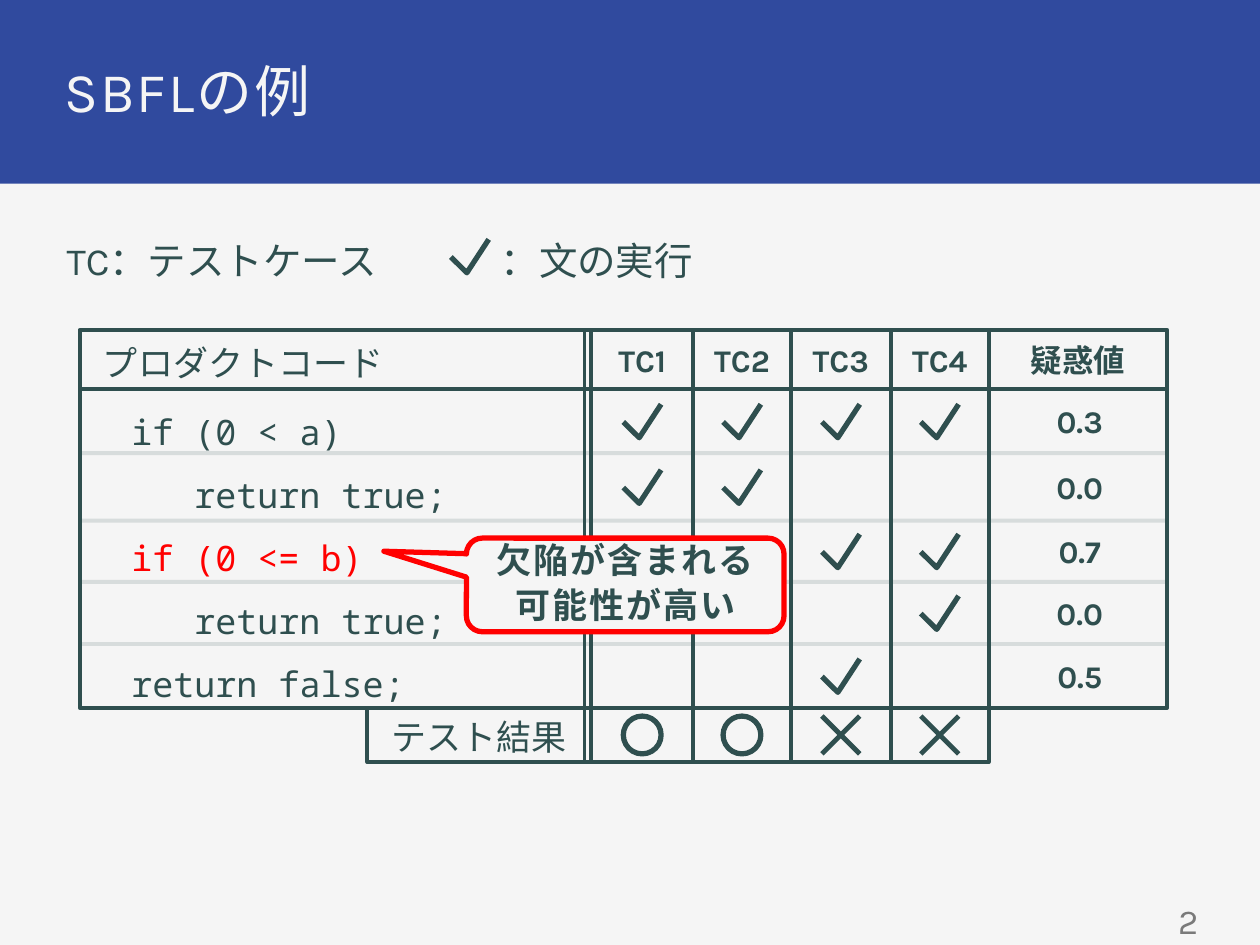
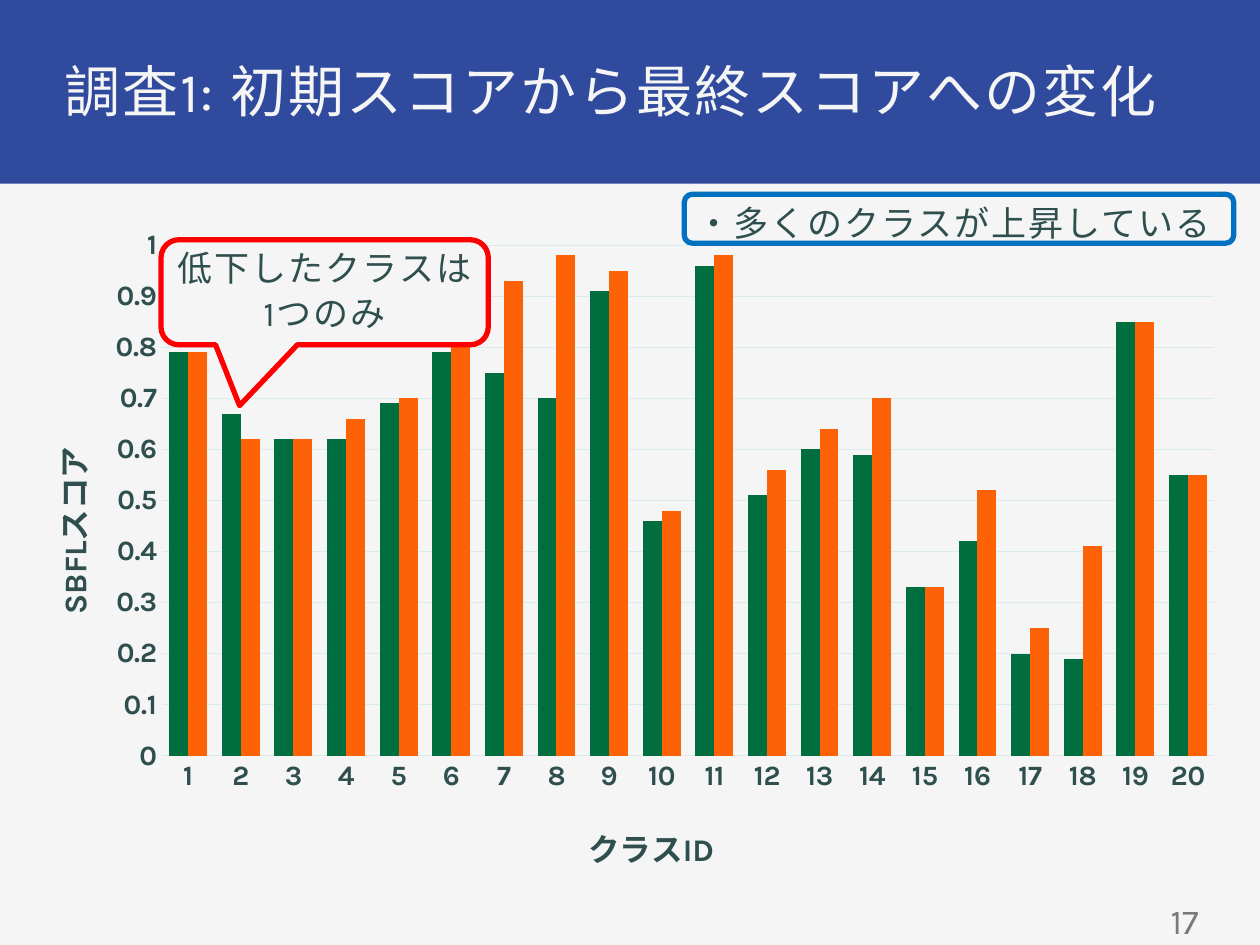
import itertools

import lxml.etree
import pptx
import pptx.chart.data
import pptx.dml.color
import pptx.enum.chart
import pptx.enum.shapes
import pptx.enum.text
import pptx.oxml
import pptx.oxml.ns
import pptx.util

Pt = pptx.util.Pt
RGBColor = pptx.dml.color.RGBColor
Shape = pptx.enum.shapes.MSO_SHAPE
Align = pptx.enum.text.PP_ALIGN
Anchor = pptx.enum.text.MSO_ANCHOR
qn = pptx.oxml.ns.qn

PAPER = RGBColor(0xF5, 0xF5, 0xF5)
BAND = RGBColor(0x30, 0x4A, 0x9E)
INK = RGBColor(0x2F, 0x4F, 0x4F)
GRAY = RGBColor(0x7A, 0x7A, 0x7A)
RED = RGBColor(0xFF, 0x00, 0x00)
BLUE = RGBColor(0x00, 0x70, 0xC0)
GRID = RGBColor(0xDB, 0xEA, 0xEA)
GREEN = RGBColor(0x00, 0x6E, 0x3E)
ORANGE = RGBColor(0xFE, 0x62, 0x07)

TITLES = ["SBFLの例", "調査1: 初期スコアから最終スコアへの変化"]
PAGE_NUMBERS = ["2", "17"]

TEST_CASES = ["TC1", "TC2", "TC3", "TC4"]
STATEMENTS = [
    ("if (0 < a)", 48, INK, [0, 1, 2, 3], "0.3"),
    ("return true;", 84, INK, [0, 1], "0.0"),
    ("if (0 <= b)", 48, RED, [2, 3], "0.7"),
    ("return true;", 84, INK, [3], "0.0"),
    ("return false;", 48, INK, [2], "0.5"),
]
PASSED = [True, True, False, False]
CASE_EDGES = [338, 396, 452, 509, 565]
ROW_EDGES = [222.5, 259, 297.5, 332.5, 368, 404.5]
TABLE_LEFT, TABLE_RIGHT, TABLE_TOP = 45.5, 667, 188.5
CODE_RIGHT, RESULT_LEFT, RESULT_BOTTOM = 334, 210, 435.5
MARK = 21.6

SCORES = {
    "初期スコア": (GREEN, [0.79, 0.67, 0.62, 0.62, 0.69, 0.79, 0.75, 0.7, 0.91, 0.46,
                      0.96, 0.51, 0.6, 0.59, 0.33, 0.42, 0.2, 0.19, 0.85, 0.55]),
    "最終スコア": (ORANGE, [0.79, 0.62, 0.62, 0.66, 0.7, 1, 0.93, 0.98, 0.95, 0.48,
                       0.98, 0.56, 0.64, 0.7, 0.33, 0.52, 0.25, 0.41, 0.85, 0.55]),
}


def style_font(font, size, color=INK, bold=False, name="Karla"):
    """Set the look of a font."""
    font.size, font.bold, font.name = Pt(size), bold, name
    font.color.rgb = color


def write(frame, text, size=18, color=INK, bold=False, name="Karla", align=Align.LEFT,
          line=1.0, before=0, after=0, tracking=0):
    """Write each line of text as one formatted paragraph."""
    for index, words in enumerate(text.split("\n")):
        para = frame.add_paragraph() if index else frame.paragraphs[0]
        para.alignment, para.line_spacing = align, line
        para.space_before, para.space_after = Pt(before), Pt(after)
        span = para.add_run()
        span.text = words
        style_font(span.font, size, color, bold, name)
        if tracking:
            span.font._element.set("spc", str(round(tracking * 100)))


def set_frame(frame, anchor, left, top, right, bottom):
    """Set wrapping, anchor and insets of a text frame."""
    frame.word_wrap, frame.vertical_anchor = True, anchor
    frame.auto_size = pptx.enum.text.MSO_AUTO_SIZE.NONE
    frame.margin_left, frame.margin_top = Pt(left), Pt(top)
    frame.margin_right, frame.margin_bottom = Pt(right), Pt(bottom)


def add_text(page, text, left, top, width, height, anchor=Anchor.TOP, **format):
    """Add a text box and return it."""
    box = page.shapes.add_textbox(Pt(left), Pt(top), Pt(width), Pt(height))
    set_frame(box.text_frame, anchor, 7.2, 3.6, 7.2, 3.6)
    write(box.text_frame, text, **format)
    return box


def paint(shape, fill=None, line=None, weight=2.25):
    """Give a shape its fill and outline without a shadow."""
    shape.shadow.inherit = False
    if fill is None:
        shape.fill.background()
    else:
        shape.fill.solid()
        shape.fill.fore_color.rgb = fill
    if line is None:
        shape.line.fill.background()
    else:
        shape.line.color.rgb = line
        shape.line.width = Pt(weight)


def add_box(page, kind, left, top, width, height, **look):
    """Add a painted preset shape."""
    shape = page.shapes.add_shape(kind, Pt(left), Pt(top), Pt(width), Pt(height))
    paint(shape, **look)
    return shape


def add_note(page, kind, text, place, line, adjustments=(), anchor=Anchor.MIDDLE,
             align=Align.CENTER, bold=False):
    """Add a rounded note with text."""
    note = add_box(page, kind, *place, fill=PAPER, line=line, weight=3)
    for index, value in enumerate(adjustments):
        note.adjustments[index] = value
    set_frame(note.text_frame, anchor, 5.76, 5.76, 5.76, 5.76)
    write(note.text_frame, text, size=20, bold=bold, align=align,
          line=0.9, before=3, after=1, tracking=1.1)


def add_line(page, x1, y1, x2, y2, weight=2.25, opacity=100):
    """Add a straight line."""
    line = page.shapes.add_connector(
        pptx.enum.shapes.MSO_CONNECTOR.STRAIGHT, Pt(x1), Pt(y1), Pt(x2), Pt(y2))
    line.line.color.rgb, line.line.width = INK, Pt(weight)
    properties = line._element.spPr
    if opacity < 100:
        color = properties.find(".//" + qn("a:srgbClr"))
        lxml.etree.SubElement(color, qn("a:alpha")).set("val", str(opacity * 1000))
    lxml.etree.SubElement(properties, qn("a:effectLst"))


def add_tick(page, x, y):
    """Draw a tick centred on a point."""
    points = [(-10.8, 0.4), (-1.7, 9.4), (10.8, -9.7)]
    start, *rest = [(Pt(x + dx), Pt(y + dy)) for dx, dy in points]
    builder = page.shapes.build_freeform(*start)
    builder.add_line_segments(rest, close=False)
    paint(builder.convert_to_shape(), line=INK, weight=3)


def add_cross(page, x, y):
    """Draw a cross centred on a point."""
    half = MARK / 2
    for slope in (1, -1):
        add_line(page, x - half, y - slope * half, x + half, y + slope * half, weight=2.75)


def middles(edges):
    """Return the middle of each gap between edges."""
    return [(low + high) / 2 for low, high in itertools.pairwise(edges)]


def add_page(deck, title, number):
    """Add a titled, numbered page."""
    page = deck.slides.add_slide(deck.slide_layouts[5])
    box = page.shapes.title
    box.left, box.top, box.width, box.height = Pt(31), Pt(31), Pt(657), Pt(42.5)
    set_frame(box.text_frame, Anchor.TOP, 5.76, 5.76, 0, 4.32)
    write(box.text_frame, title, size=32, color=PAPER, line=0.9, before=16, tracking=1.1)
    add_text(page, number, 527, 512, 165, 28, anchor=Anchor.MIDDLE,
             size=20, color=GRAY, align=Align.RIGHT)
    return page


def style_master(deck, page):
    """Put the background and title band on the master."""
    fill = deck.slide_master.background.fill
    fill.solid()
    fill.fore_color.rgb = PAPER
    band = add_box(page, Shape.RECTANGLE, -1.5, -1.5, 723, 106.5, fill=BAND)
    deck.slide_master.shapes.element.insert(2, band.element)


def draw_example(page):
    """Draw the table of statements, test cases and suspicion scores."""
    add_text(page, "TC：テストケース", 31, 132, 240, 34, size=22)
    add_text(page, "：文の実行", 279, 132, 200, 34, size=22)
    add_tick(page, 268.5, 146.5)

    code = "\n".join(statement[0] for statement in STATEMENTS)
    listing = add_text(page, code, 20, 219, 329, 185, size=20, name="Noto Sans Mono", line=1.5)
    for para, (_, indent, color, _, _) in zip(listing.text_frame.paragraphs, STATEMENTS):
        para._p.get_or_add_pPr().set("marL", str(Pt(indent)))
        para.runs[0].font.color.rgb = color

    table_bottom = ROW_EDGES[-1]
    for y in ROW_EDGES[1:-1]:
        add_line(page, TABLE_LEFT, y, TABLE_RIGHT, y, opacity=15)
    add_line(page, TABLE_LEFT, ROW_EDGES[0], TABLE_RIGHT, ROW_EDGES[0])
    for x in [CODE_RIGHT, *CASE_EDGES]:
        add_line(page, x, TABLE_TOP, x, RESULT_BOTTOM)
    add_box(page, Shape.RECTANGLE, TABLE_LEFT, TABLE_TOP,
            TABLE_RIGHT - TABLE_LEFT, table_bottom - TABLE_TOP, line=INK)
    add_box(page, Shape.RECTANGLE, RESULT_LEFT, table_bottom,
            CASE_EDGES[-1] - RESULT_LEFT, RESULT_BOTTOM - table_bottom, line=INK)

    center = {"align": Align.CENTER}
    add_text(page, "プロダクトコード", 32, 191.5, 214, 32, size=20, **center)
    add_text(page, "テスト結果", RESULT_LEFT, 405.5, 127.5, 32, size=20, **center)
    add_text(page, "疑惑値", 572.5, 191.5, 87, 29, bold=True, **center)

    columns, rows = middles(CASE_EDGES), middles(ROW_EDGES)
    result_y = (table_bottom + RESULT_BOTTOM) / 2
    for name, passed, x in zip(TEST_CASES, PASSED, columns):
        add_text(page, name, x - 24, 191.5, 48, 29, bold=True, **center)
        if passed:
            add_box(page, Shape.OVAL, x - MARK / 2, result_y - MARK / 2, MARK, MARK,
                    line=INK, weight=3)
        else:
            add_cross(page, x, result_y)
    for (_, _, _, executed, score), y in zip(STATEMENTS, rows):
        for case in executed:
            add_tick(page, columns[case], y)
        add_text(page, score, 593, y - 14.5, 48, 29, bold=True, **center)

    add_note(page, Shape.ROUNDED_RECTANGULAR_CALLOUT, "欠陥が含まれる\n可能性が高い",
             (266.5, 307.5, 181.5, 53.5), RED, (-0.76, -0.36, 0.17), bold=True)


def set_layout(parent, **values):
    """Give a chart part a manual layout."""
    for old in parent.findall(qn("c:layout")):
        parent.remove(old)
    layout = lxml.etree.Element(qn("c:layout"))
    manual = lxml.etree.SubElement(layout, qn("c:manualLayout"))
    for tag, value in values.items():
        lxml.etree.SubElement(manual, qn("c:" + tag)).set("val", str(value))
    text = parent.find(qn("c:tx"))
    if text is None:
        parent.insert(0, layout)
    else:
        text.addnext(layout)


def style_axis(axis, title, line, x, y, turn=0):
    """Format an axis and place its title."""
    axis.major_tick_mark = pptx.enum.chart.XL_TICK_MARK.NONE
    axis.format.line.color.rgb, axis.format.line.width = line, Pt(0.75)
    style_font(axis.tick_labels.font, 16, bold=True)
    frame = axis.axis_title.text_frame
    write(frame, title, bold=True)
    body = frame._txBody.bodyPr
    body.set("rot", str(turn * 60000))
    body.set("vert", "horz")
    set_layout(axis.axis_title._element, xMode="edge", yMode="edge", x=x, y=y)


def draw_scores(page):
    """Draw the chart of first and last scores with its notes."""
    data = pptx.chart.data.CategoryChartData()
    data.categories = [str(number) for number in range(1, 21)]
    for name, (_, values) in SCORES.items():
        data.add_series(name, values)
    chart = page.shapes.add_chart(
        pptx.enum.chart.XL_CHART_TYPE.COLUMN_CLUSTERED,
        Pt(16), Pt(125.5), Pt(689), Pt(395.5), data).chart
    style_font(chart.font, 10)
    chart.has_title = chart.has_legend = False
    plot = chart.plots[0]
    plot.gap_width, plot.overlap, plot.vary_by_categories = 78, 0, False
    for series, (color, _) in zip(plot.series, SCORES.values()):
        series.format.fill.solid()
        series.format.fill.fore_color.rgb = color
    style_axis(chart.category_axis, "クラスID", GRID, 0.46, 0.86)
    axis = chart.value_axis
    style_axis(axis, "SBFLスコア", PAPER, 0.01, 0.32, turn=-90)
    axis.minimum_scale, axis.maximum_scale, axis.major_unit = 0, 1, 0.1
    grid = axis.major_gridlines.format.line
    grid.color.rgb, grid.width = GRID, Pt(0.75)
    axis.tick_labels.number_format = "General"
    axis.tick_labels.number_format_is_linked = False
    set_layout(chart._chartSpace.find(".//" + qn("c:plotArea")), layoutTarget="inner",
               xMode="edge", yMode="edge", x=0.111, y=0.037, w=0.873, h=0.738)

    add_note(page, Shape.ROUNDED_RECTANGULAR_CALLOUT, "低下したクラスは\n1つのみ",
             (92, 137, 187, 60), RED, (-0.26, 1.08, 0.17))
    add_note(page, Shape.ROUNDED_RECTANGLE, "・多くのクラスが上昇している",
             (391, 111, 314, 28), BLUE, anchor=Anchor.TOP, align=Align.LEFT)


def main():
    """Build and save the deck."""
    deck = pptx.Presentation()
    deck.slide_width, deck.slide_height = Pt(720), Pt(540)
    pages = [add_page(deck, *parts) for parts in zip(TITLES, PAGE_NUMBERS)]
    style_master(deck, pages[0])
    draw_example(pages[0])
    draw_scores(pages[1])
    deck.save("out.pptx")


if __name__ == "__main__":
    main()
